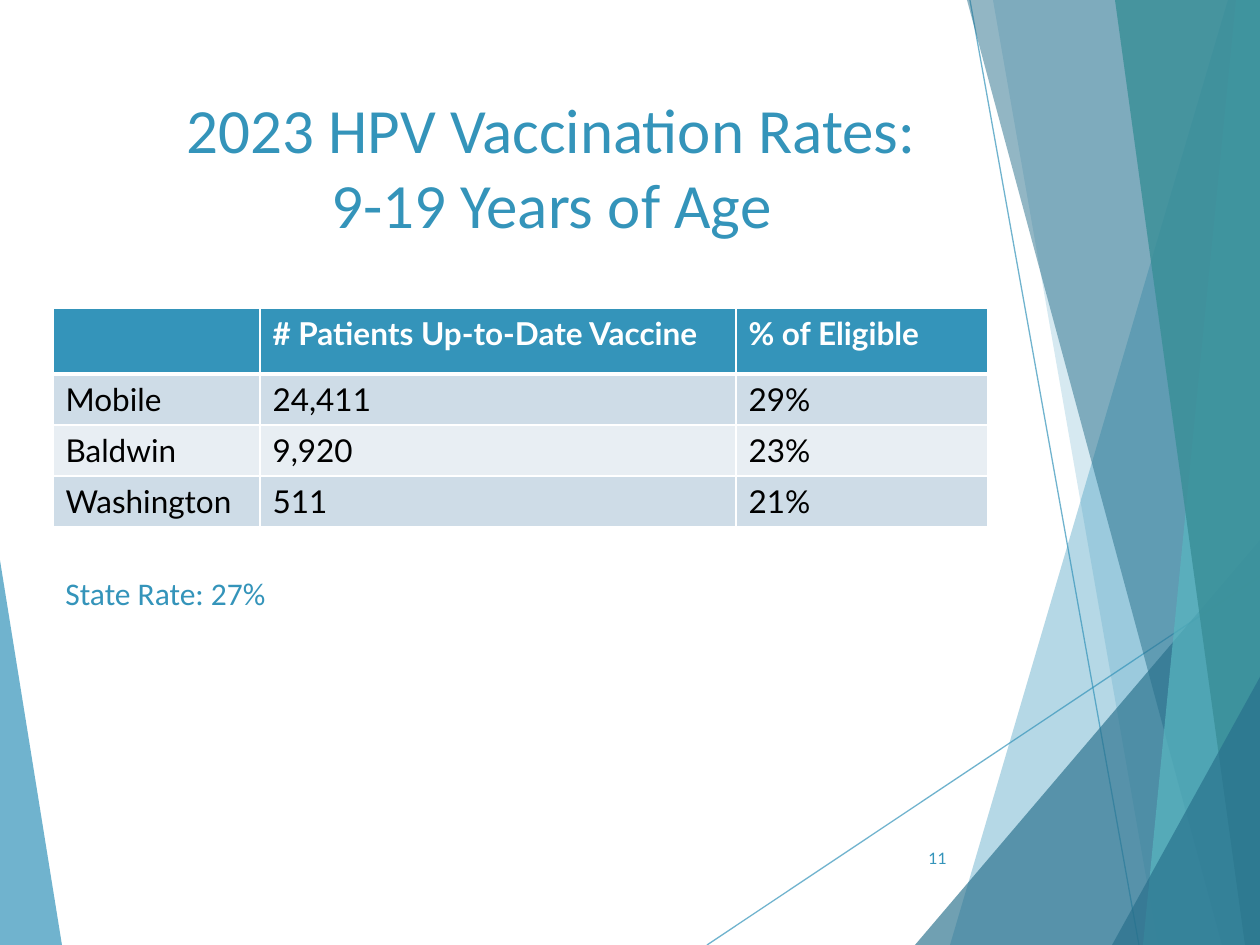
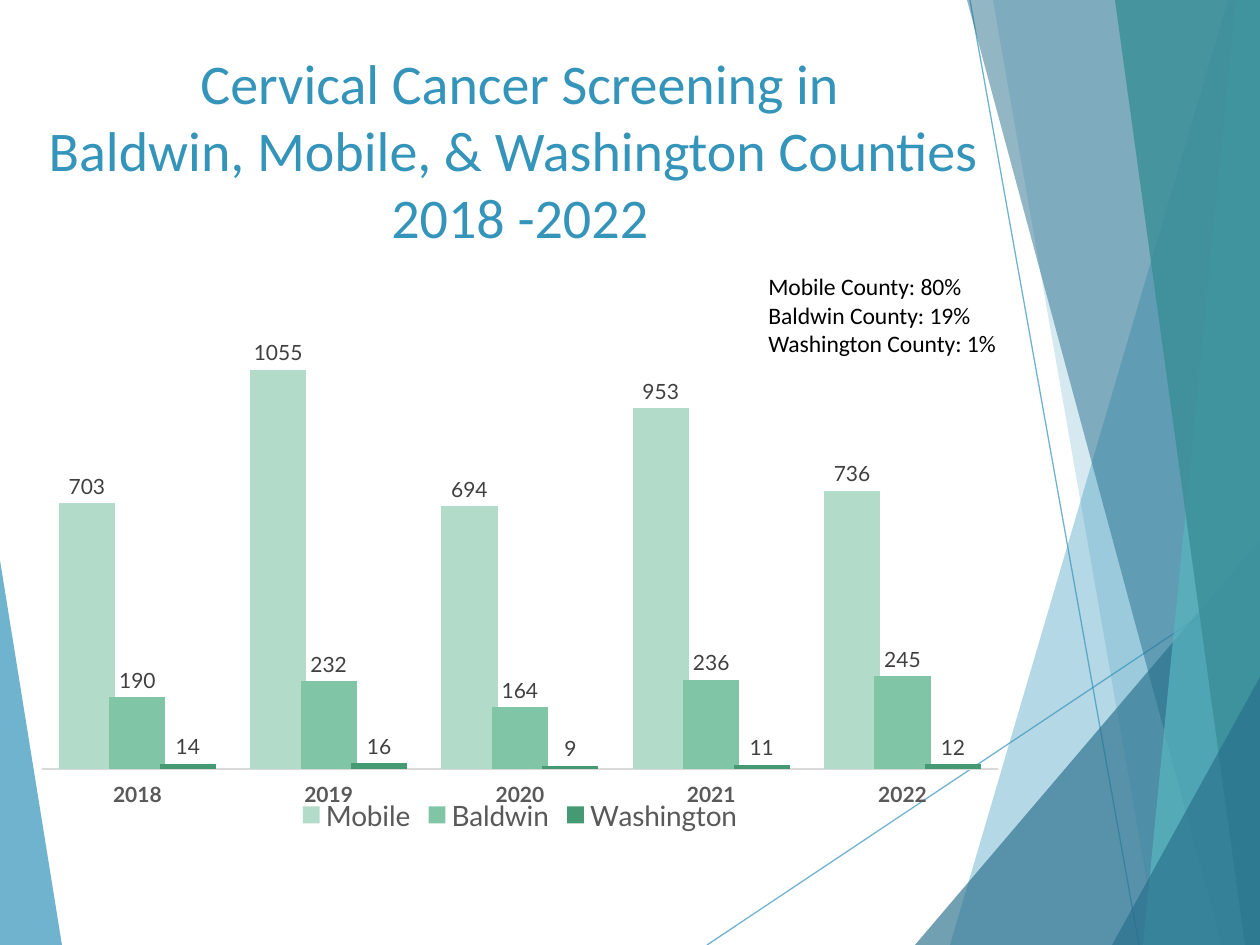
from lxml.etree import SubElement
from pptx import Presentation
from pptx.chart.data import CategoryChartData
from pptx.dml.color import RGBColor
from pptx.enum.chart import XL_CHART_TYPE as ChartType
from pptx.enum.chart import XL_LABEL_POSITION as LabelPosition
from pptx.enum.chart import XL_LEGEND_POSITION as LegendPosition
from pptx.enum.chart import XL_TICK_LABEL_POSITION as TickLabels
from pptx.enum.chart import XL_TICK_MARK as TickMark
from pptx.enum.shapes import MSO_CONNECTOR as Connector
from pptx.enum.text import MSO_ANCHOR as Anchor
from pptx.enum.text import MSO_AUTO_SIZE as AutoSize
from pptx.enum.text import PP_ALIGN as Align
from pptx.oxml import parse_xml
from pptx.oxml.ns import nsdecls, qn
from pptx.util import Pt

EMU_PER_PX = 914400 / 126
WIDTH, HEIGHT = 1260, 945

COLORS = {
    "blue": "3494BA", "navy": "276F8B", "aqua": "58B6C0", "teal": "3A8F98",
    "white": "FFFFFF", "black": "000000", "row_dark": "CEDCE7", "row_light": "E8EEF3",
    "mobile": "B2DCC9", "baldwin": "80C6A6", "washington": "459973",
    "axis": "D9D9D9", "axis_text": "595959", "label": "404040",
}
HEAD_FONT, BODY_FONT = "Calibri", "Lato"

# Backdrop facets, back to front: corners, colour, opacity in percent
def band(top_x, bottom_x):
    return [(top_x, 0), (bottom_x, HEIGHT), (WIDTH, HEIGHT), (WIDTH, 0)]


def corner(left_x, top_y):
    return [(left_x, HEIGHT), (WIDTH, top_y), (WIDTH, HEIGHT)]


BACKDROP_LINES = [((707, 945), (1260, 576)), ((970, 0), (1139, 945))]
LEFT_FACET = [(0, 560), (62, HEIGHT), (0, HEIGHT)]
FACETS = [
    (LEFT_FACET, "blue", 70),
    (band(1228, 950), "blue", 36),
    (band(993, 1158), "blue", 20),
    (corner(915, 540), "navy", 66),
    (band(967, 1222), "navy", 50),
    (band(1236, 1143), "aqua", 70),
    (band(1115, 1245), "teal", 82),
    (corner(1112, 677), "navy", 66),
]


def px(*lengths):
    return [round(length * EMU_PER_PX) for length in lengths]


def rgb(name):
    return RGBColor.from_string(COLORS[name])


def style_font(font, name, size, color, bold=False):
    font.name, font.size, font.bold = name, Pt(size), bold
    font.color.rgb = rgb(color)


def set_opacity(element, percent):
    color = next(element.iter(qn("a:srgbClr")))
    SubElement(color, qn("a:alpha")).set("val", str(percent * 1000))


# Shared parts
def add_facet(shapes, corners, color, opacity):
    builder = shapes.build_freeform(*corners[0], scale=EMU_PER_PX)
    builder.add_line_segments(corners[1:], close=True)
    facet = builder.convert_to_shape()
    facet.shadow.inherit = False
    facet.fill.solid()
    facet.fill.fore_color.rgb = rgb(color)
    set_opacity(facet.element.spPr, opacity)
    facet.line.fill.background()
    return facet


def add_thin_line(shapes, start, end):
    line = shapes.add_connector(Connector.STRAIGHT, *px(*start, *end))
    line.line.width = Pt(0.75)
    line.line.color.rgb = rgb("blue")
    set_opacity(line.element.spPr, 70)
    SubElement(line.element.spPr, qn("a:effectLst"))
    return line


def move_backdrop_to_layout(slide, layout):
    """Draw the facets once and hang them on the layout, behind its placeholders."""
    shapes = slide.shapes
    parts = [add_facet(shapes, *FACETS[0])]
    parts += [add_thin_line(shapes, *ends) for ends in BACKDROP_LINES]
    parts += [add_facet(shapes, *facet) for facet in FACETS[1:]]
    for index, part in enumerate(parts):
        next(part.element.iter(qn("p:cNvPr"))).set("id", str(100 + index))
        layout.shapes.element.insert(2 + index, part.element)


def set_title(slide, box, lines, size):
    title = slide.shapes.title
    title.left, title.top, title.width, title.height = px(*box)
    frame = title.text_frame
    frame.text = "\v".join(lines)
    frame.word_wrap, frame.auto_size = True, AutoSize.NONE
    frame.vertical_anchor = Anchor.TOP
    paragraph = frame.paragraphs[0]
    paragraph.alignment = Align.CENTER
    style_font(paragraph.font, HEAD_FONT, size, "blue")


def add_text(slide, box, lines, font, size, color, align=Align.LEFT, anchor=Anchor.TOP):
    frame = slide.shapes.add_textbox(*px(*box)).text_frame
    frame.word_wrap, frame.vertical_anchor = True, anchor
    frame.text = "\n".join(lines)
    for paragraph in frame.paragraphs:
        paragraph.alignment = align
        style_font(paragraph.font, font, size, color)


# Vaccination table
def set_borders(cell, top=1, bottom=1):
    properties = cell._tc.get_or_add_tcPr()
    widths = {"lnL": 1, "lnR": 1, "lnT": top, "lnB": bottom}
    for index, (side, width) in enumerate(widths.items()):
        properties.insert(index, parse_xml(
            f'<a:{side} {nsdecls("a")} w="{Pt(width)}"><a:solidFill>'
            f'<a:srgbClr val="{COLORS["white"]}"/></a:solidFill></a:{side}>'))


def add_rates_table(slide, box, rows, column_widths, row_heights):
    table = slide.shapes.add_table(len(rows), len(rows[0]), *px(*box)).table
    for column, width in zip(table.columns, px(*column_widths)):
        column.width = width
    for row, height in zip(table.rows, px(*row_heights)):
        row.height = height
    for row_index, row in enumerate(rows):
        header = row_index == 0
        fill = "blue" if header else ("row_light", "row_dark")[row_index % 2]
        for column_index, text in enumerate(row):
            cell = table.cell(row_index, column_index)
            cell.text = text
            cell.fill.solid()
            cell.fill.fore_color.rgb = rgb(fill)
            set_borders(cell, top=3 if row_index == 1 else 1, bottom=3 if header else 1)
            style_font(cell.text_frame.paragraphs[0].font, BODY_FONT, 18,
                       "white" if header else "black", bold=header)


# Screening chart
def set_plot_layout(chart, x, y, width, height):
    plot_area = chart._chartSpace.chart.plotArea
    for layout in plot_area.findall(qn("c:layout")):
        plot_area.remove(layout)
    sizes = "".join(f'<c:{tag} val="{value}"/>' for tag, value in
                    zip("xywh", (x, y, width, height)))
    plot_area.insert(0, parse_xml(
        f'<c:layout {nsdecls("c")}><c:manualLayout><c:layoutTarget val="inner"/>'
        f'<c:xMode val="edge"/><c:yMode val="edge"/>{sizes}</c:manualLayout></c:layout>'))


def add_screening_chart(slide, box, years, counts):
    data = CategoryChartData()
    data.categories = years
    for county, values in counts.items():
        data.add_series(county, values)
    chart = slide.shapes.add_chart(ChartType.COLUMN_CLUSTERED, *px(*box), data).chart
    style_font(chart.font, BODY_FONT, 10, "black")
    chart.has_title = False
    set_plot_layout(chart, 0.01, 0, 0.98, 0.87)

    plot = chart.plots[0]
    plot.gap_width, plot.overlap, plot.vary_by_categories = 61, 10, False
    plot.has_data_labels = True
    labels = plot.data_labels
    labels.show_value, labels.position = True, LabelPosition.OUTSIDE_END
    style_font(labels.font, BODY_FONT, 12, "label")
    for series in plot.series:
        series.format.fill.solid()
        series.format.fill.fore_color.rgb = rgb(series.name.lower())

    axis = chart.category_axis
    axis.major_tick_mark = axis.minor_tick_mark = TickMark.NONE
    axis.tick_label_position = TickLabels.LOW
    axis.format.line.width = Pt(0.75)
    axis.format.line.color.rgb = rgb("axis")
    style_font(axis.tick_labels.font, BODY_FONT, 12, "axis_text", bold=True)

    value_axis = chart.value_axis
    value_axis.visible = value_axis.has_major_gridlines = False
    value_axis.minimum_scale, value_axis.maximum_scale = 0, 1200

    chart.has_legend = True
    chart.legend.position = LegendPosition.BOTTOM
    chart.legend.include_in_layout = False
    style_font(chart.legend.font, BODY_FONT, 16, "axis_text")


# Slides
def build_vaccination_slide(slide):
    set_title(slide, (84, 84, 935, 181),
              ["2023 HPV Vaccination Rates:", "9-19 Years of Age"], 36)
    add_rates_table(slide, (53, 308, 935, 219), [
        ("", "# Patients Up-to-Date Vaccine", "% of Eligible"),
        ("Mobile", "24,411", "29%"),
        ("Baldwin", "9,920", "23%"),
        ("Washington", "511", "21%"),
    ], (207, 476, 252), (66, 51, 51, 51))
    add_text(slide, (888, 833, 71, 50), ["11"], BODY_FONT, 9, "blue",
             Align.RIGHT, Anchor.MIDDLE)
    add_text(slide, (53, 568, 725, 89), ["State Rate: 27%"], HEAD_FONT, 18, "blue")


def build_screening_slide(slide):
    set_title(slide, (21, 42, 998, 170),
              ["Cervical Cancer Screening in",
               "Baldwin, Mobile, & Washington Counties ", "2018 -2022"], 32)
    add_screening_chart(slide, (32, 315, 976, 522),
                        ["2018", "2019", "2020", "2021", "2022"], {
                            "Mobile": (703, 1055, 694, 953, 736),
                            "Baldwin": (190, 232, 164, 236, 245),
                            "Washington": (14, 16, 9, 11, 12),
                        })
    add_text(slide, (756, 266, 291, 98),
             ["Mobile County: 80%", "Baldwin County: 19%", "Washington County: 1%"],
             HEAD_FONT, 13.5, "black")


def main():
    presentation = Presentation()
    presentation.slide_width, presentation.slide_height = px(WIDTH, HEIGHT)
    layout = presentation.slide_layouts.get_by_name("Title Only")
    vaccination, screening = [presentation.slides.add_slide(layout) for _ in range(2)]
    move_backdrop_to_layout(vaccination, layout)
    build_vaccination_slide(vaccination)
    build_screening_slide(screening)
    presentation.save("out.pptx")


if __name__ == "__main__":
    main()
